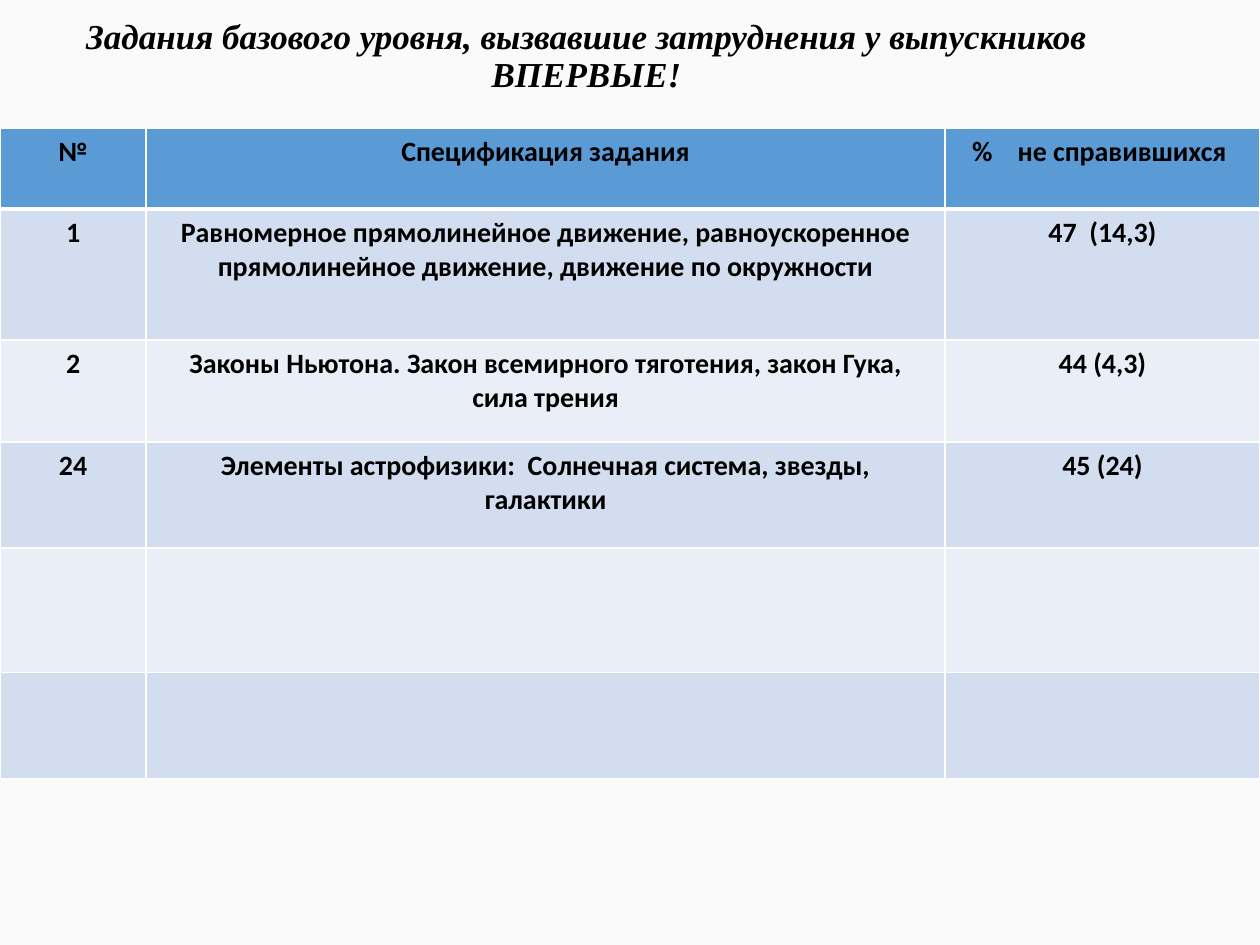
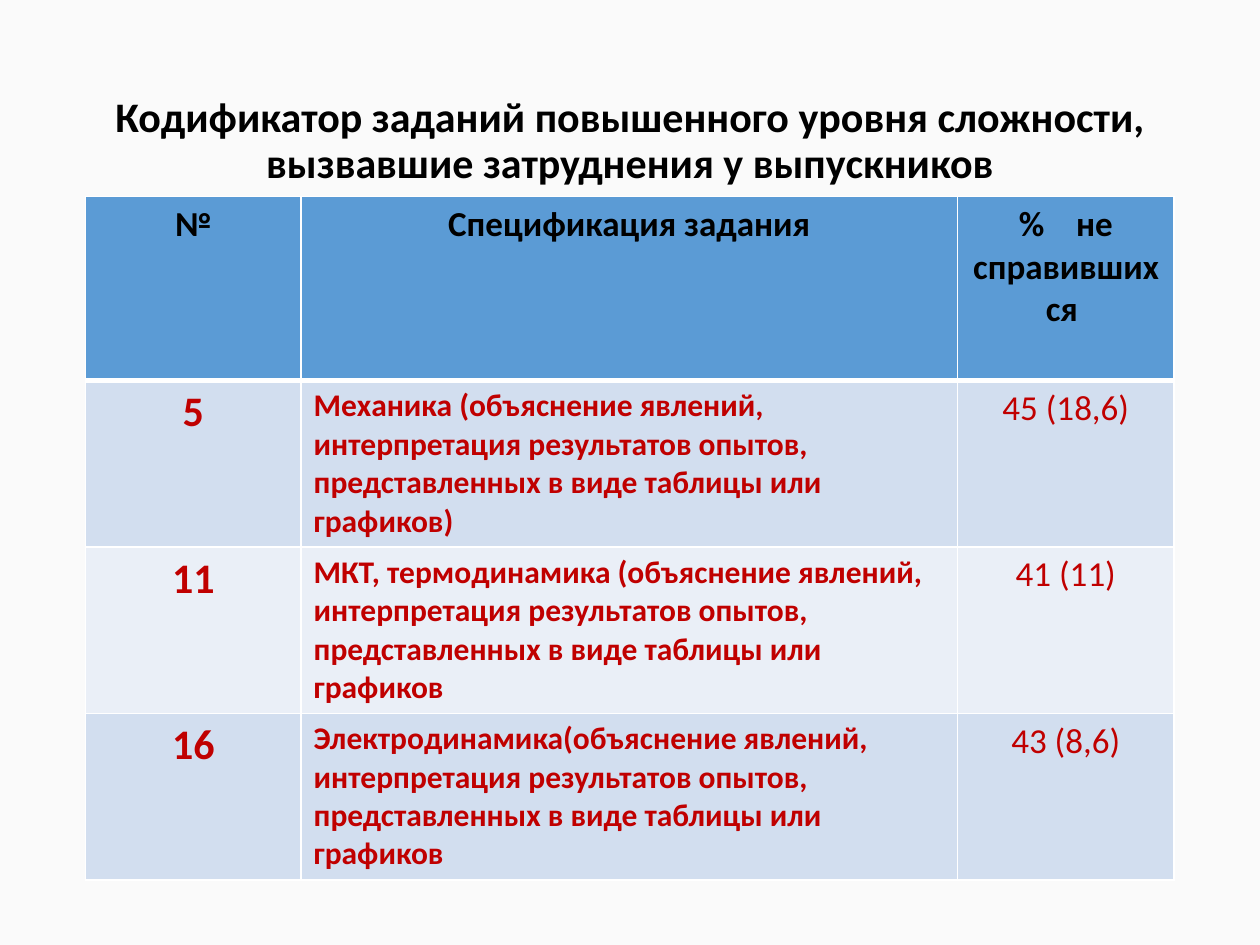
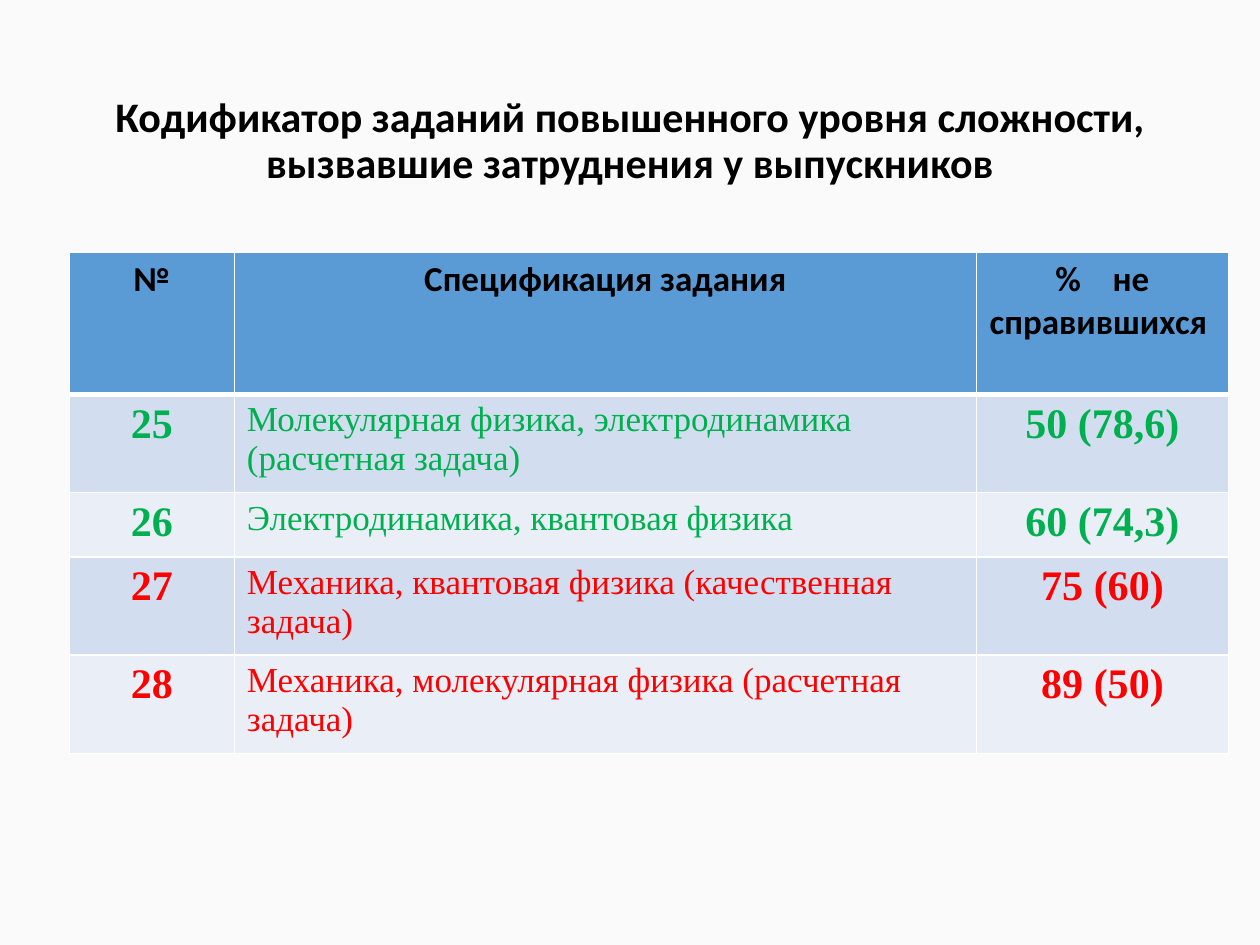
from pptx import Presentation
from pptx.dml.color import RGBColor
from pptx.enum.text import MSO_ANCHOR, MSO_AUTO_SIZE, PP_ALIGN
from pptx.oxml import parse_xml
from pptx.oxml.ns import nsdecls
from pptx.util import Inches, Pt

BACKGROUND = RGBColor(0xFA, 0xFA, 0xFA)
HEADER_FILL = RGBColor(0x5B, 0x9B, 0xD5)
BAND_FILLS = (RGBColor(0xD2, 0xDE, 0xEF), RGBColor(0xEA, 0xEF, 0xF7))
BLACK = RGBColor(0x00, 0x00, 0x00)
DARK_RED = RGBColor(0xC0, 0x00, 0x00)
RED = RGBColor(0xFF, 0x00, 0x00)
GREEN = RGBColor(0x00, 0xB0, 0x50)
BORDER = RGBColor(0xFF, 0xFF, 0xFF)
SANS, SERIF = "Calibri", "Times New Roman"
CENTER, LEFT = PP_ALIGN.CENTER, PP_ALIGN.LEFT

# Content
HEADERS = ("№", "Спецификация задания", "%    не справившихся ")
ADVANCED_TITLE = dict(
    title="Кодификатор заданий повышенного уровня сложности, "
          "вызвавшие затруднения у выпускников",
    title_box=(0.69, 0.4, 8.62, 1.45),
    title_style=(SANS, 24, True, False),
    header_size=20,
)
EXPLAINING = ("объяснение явлений, интерпретация результатов опытов, "
              "представленных в виде таблицы или графиков")

# Column styles: font, size, bold, alignment. Each task starts with its colour.
SLIDES = [
    dict(
        title="Задания базового уровня, вызвавшие затруднения у выпускников\vВПЕРВЫЕ!",
        title_box=(0, 0, 9.31, 0.91),
        title_style=(SERIF, 20, True, True),
        header_size=16,
        table_at=(0, 1.02),
        widths=(1.16, 6.34, 2.5),
        heights=(0.64, 1.04, 0.81, 0.84, 0.99, 0.84),
        column_styles=[(SANS, 16, True, CENTER)] * 3,
        tasks=[
            (BLACK, "1", "Равномерное прямолинейное движение, равноускоренное "
                         "прямолинейное движение, движение по окружности", "47  (14,3)"),
            (BLACK, "2", "Законы Ньютона. Закон всемирного тяготения, закон Гука, "
                         "сила трения", "44 (4,3)"),
            (BLACK, "24", "Элементы астрофизики:  Солнечная система, звезды, галактики",
             "45 (24)"),
            (BLACK, "", "", ""),
            (BLACK, "", "", ""),
        ],
    ),
    dict(
        ADVANCED_TITLE,
        table_at=(0.68, 1.56),
        widths=(1.71, 5.21, 1.72),
        heights=(1.46, 1.32, 1.32, 1.32),
        column_styles=[(SANS, 24, True, CENTER), (SANS, 18, True, LEFT),
                       (SANS, 20, False, CENTER)],
        tasks=[
            (DARK_RED, "5", f"Механика ({EXPLAINING})", "45 (18,6)"),
            (DARK_RED, "11", f"МКТ, термодинамика ({EXPLAINING}", "41 (11)"),
            (DARK_RED, "16", f"Электродинамика({EXPLAINING}", "43 (8,6)"),
        ],
    ),
    dict(
        ADVANCED_TITLE,
        table_at=(0.55, 2),
        widths=(1.31, 5.89, 2),
        heights=(1.13, 0.78, 0.51, 0.78, 0.78),
        column_styles=[(SERIF, 24, True, CENTER), (SERIF, 20, False, LEFT),
                       (SERIF, 24, True, CENTER)],
        tasks=[
            (GREEN, "25", "Молекулярная физика, электродинамика (расчетная задача)",
             "50 (78,6)"),
            (GREEN, "26", "Электродинамика, квантовая физика", "60 (74,3)"),
            (RED, "27", "Механика, квантовая физика (качественная задача)", "75 (60)"),
            (RED, "28", "Механика, молекулярная физика (расчетная задача)", "89 (50)"),
        ],
    ),
]


def style_font(font, name, size, bold, color, italic=False):
    font.name, font.size = name, Pt(size)
    font.bold, font.italic = bold, italic
    font.color.rgb = color


def add_title(slide, content):
    title = slide.shapes.title
    title.left, title.top, title.width, title.height = map(Inches, content["title_box"])
    frame = title.text_frame
    frame.text = content["title"]
    frame.word_wrap = True
    frame.auto_size = MSO_AUTO_SIZE.NONE
    frame.vertical_anchor = MSO_ANCHOR.MIDDLE
    heading = frame.paragraphs[0]
    heading.alignment, heading.line_spacing = CENTER, 0.9
    name, size, bold, italic = content["title_style"]
    for run in heading.runs:
        style_font(run.font, name, size, bold, BLACK, italic)


def add_borders(cell, top, bottom):
    properties = cell._tc.get_or_add_tcPr()
    for side, points in (("L", 1), ("R", 1), ("T", top), ("B", bottom)):
        properties.append(parse_xml(
            f'<a:ln{side} {nsdecls("a")} w="{Pt(points)}"><a:solidFill>'
            f'<a:srgbClr val="{BORDER}"/></a:solidFill></a:ln{side}>'))


def fill_row(table, row, texts, styles, color, fill):
    for column, (text, (name, size, bold, alignment)) in enumerate(zip(texts, styles)):
        cell = table.cell(row, column)
        # The thick rule lies between the header and the first task
        add_borders(cell, top=3 if row == 1 else 1, bottom=3 if row == 0 else 1)
        cell.fill.solid()
        cell.fill.fore_color.rgb = fill
        cell.text_frame.text = text
        paragraph = cell.text_frame.paragraphs[0]
        paragraph.alignment = alignment
        for run in paragraph.runs:
            style_font(run.font, name, size, bold, color)


def add_task_table(slide, content):
    widths, heights = content["widths"], content["heights"]
    left, top = content["table_at"]
    table = slide.shapes.add_table(
        len(heights), len(widths), Inches(left), Inches(top),
        Inches(sum(widths)), Inches(sum(heights))).table
    for column, width in zip(table.columns, widths):
        column.width = Inches(width)
    for row, height in zip(table.rows, heights):
        row.height = Inches(height)

    header_styles = [(SANS, content["header_size"], True, CENTER)] * len(HEADERS)
    fill_row(table, 0, HEADERS, header_styles, BLACK, HEADER_FILL)
    for number, (color, *texts) in enumerate(content["tasks"]):
        fill_row(table, number + 1, texts, content["column_styles"], color,
                 BAND_FILLS[number % 2])


def main():
    prs = Presentation()
    prs.slide_width, prs.slide_height = Inches(10), Inches(7.5)
    background = prs.slide_master.background.fill
    background.solid()
    background.fore_color.rgb = BACKGROUND
    title_only = prs.slide_layouts[5]
    for content in SLIDES:
        slide = prs.slides.add_slide(title_only)
        add_title(slide, content)
        add_task_table(slide, content)
    prs.save("out.pptx")


if __name__ == "__main__":
    main()
